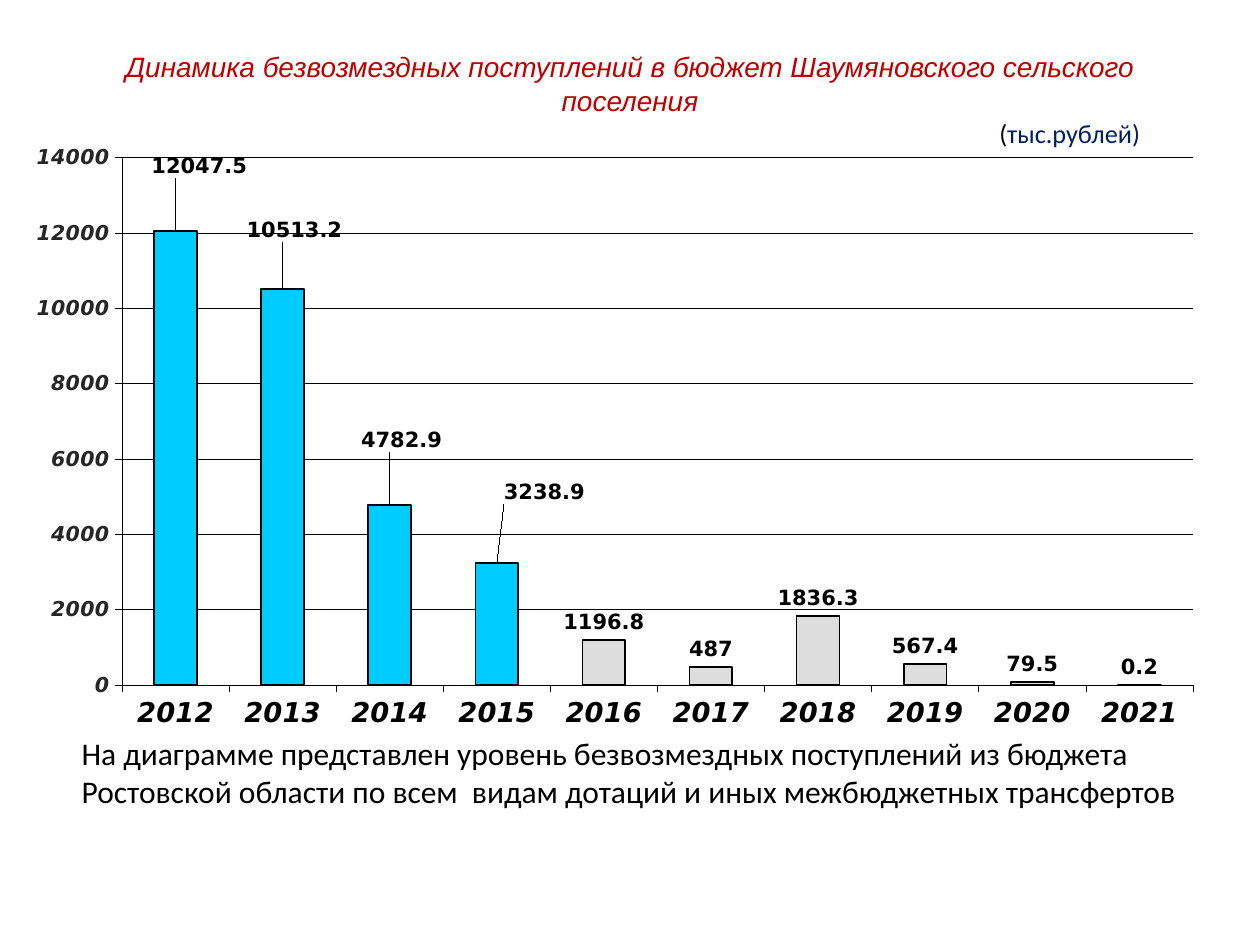
from lxml.etree import SubElement
from pptx import Presentation
from pptx.chart.data import CategoryChartData
from pptx.dml.color import RGBColor
from pptx.enum.chart import XL_CHART_TYPE, XL_LABEL_POSITION, XL_TICK_LABEL_POSITION, XL_TICK_MARK
from pptx.enum.text import MSO_ANCHOR, MSO_AUTO_SIZE, PP_ALIGN
from pptx.oxml.ns import qn
from pptx.util import Pt

BLACK = RGBColor(0x00, 0x00, 0x00)
DARK_GREY = RGBColor(0x26, 0x26, 0x26)
LIGHT_GREY = RGBColor(0xDD, 0xDD, 0xDD)
CYAN = RGBColor(0x00, 0xCC, 0xFF)
RED = RGBColor(0xC0, 0x00, 0x00)
NAVY = RGBColor(0x00, 0x20, 0x60)

CHART_FONT = "DejaVu Sans"
YEARS = [str(year) for year in range(2012, 2022)]
RECEIPTS = [12047.5, 10513.2, 4782.9, 3238.9, 1196.8, 487, 1836.3, 567.4, 79.5, 0.2]
LABEL_SHIFTS = [(0.02, -0.08), (0.01, -0.07), (0.01, -0.08), (0.04, -0.09)]


def style_font(font, name, size, color, bold=False, italic=False):
    """Set the typeface, size, colour and style of a font."""
    font.name = name
    font.size = Pt(size)
    font.color.rgb = color
    font.bold = bold
    font.italic = italic


def style_line(line, width):
    """Give a line a black colour and a width."""
    line.color.rgb = BLACK
    line.width = Pt(width)


def add_layout(parent, position, settings):
    """Insert a manual layout into a chart element."""
    for layout in parent.findall(qn("c:layout")):
        parent.remove(layout)
    layout = parent.makeelement(qn("c:layout"), {})
    parent.insert(position, layout)
    manual = SubElement(layout, qn("c:manualLayout"))
    for tag, value in settings.items():
        SubElement(manual, qn(f"c:{tag}")).set("val", str(value))


def fill_title(slide):
    """Write the heading and the unit of measure in the title placeholder."""
    title = slide.shapes.title
    title.left, title.top, title.width, title.height = Pt(45.5), Pt(22.5), Pt(629), Pt(85)
    frame = title.text_frame
    frame.auto_size = MSO_AUTO_SIZE.NONE
    frame.vertical_anchor = MSO_ANCHOR.TOP
    frame.margin_left = frame.margin_right = Pt(23)
    frame.margin_top = Pt(6)
    heading = frame.paragraphs[0]
    heading.text = "Динамика безвозмездных поступлений в бюджет Шаумяновского сельского поселения"
    heading.alignment = PP_ALIGN.CENTER
    style_font(heading.font, "Arial", 16, RED, italic=True)
    unit = frame.add_paragraph()
    unit.alignment = PP_ALIGN.RIGHT
    style_font(unit.font, "Calibri", 15, BLACK)
    unit.add_run().text = "("
    name = unit.add_run()
    name.text = "тыс.рублей)"
    name.font.color.rgb = NAVY


def style_axes(chart):
    """Format both axes and the gridlines."""
    for axis, size, color in ((chart.category_axis, 15.6, BLACK), (chart.value_axis, 11.7, DARK_GREY)):
        style_font(axis.tick_labels.font, CHART_FONT, size, color, bold=True, italic=True)
        style_line(axis.format.line, 0.25)
        axis.major_tick_mark = XL_TICK_MARK.OUTSIDE
        axis.minor_tick_mark = XL_TICK_MARK.NONE
    chart.category_axis.tick_label_position = XL_TICK_LABEL_POSITION.LOW
    value_axis = chart.value_axis
    value_axis.minimum_scale, value_axis.maximum_scale, value_axis.major_unit = 0, 14000, 2000
    style_line(value_axis.major_gridlines.format.line, 0.25)


def style_series(series):
    """Colour the columns and place their value labels."""
    series.format.fill.solid()
    series.format.fill.fore_color.rgb = LIGHT_GREY
    style_line(series.format.line, 0.98)
    labels = series.data_labels
    labels.show_value = True
    labels.position = XL_LABEL_POSITION.OUTSIDE_END
    style_font(labels.font, CHART_FONT, 12, BLACK, bold=True)
    for index in range(len(LABEL_SHIFTS)):
        point = series.points[index]
        point.format.fill.solid()
        point.format.fill.fore_color.rgb = CYAN
        style_line(point.format.line, 0.98)
        style_font(point.data_label.font, CHART_FONT, 12, BLACK, bold=True)
        point.data_label.position = XL_LABEL_POSITION.OUTSIDE_END
    shifted = series.format.element if hasattr(series.format, "element") else None
    label_elements = series.points[0].data_label if shifted is not None else None


def shift_labels(chart):
    """Move the labels of the tallest columns away from their bars."""
    label_elements = chart.element.iter(qn("c:dLbl")) if hasattr(chart, "element") else []
    for label, (x, y) in zip(label_elements, LABEL_SHIFTS):
        add_layout(label, 1, {"x": x, "y": y})


def add_receipts_chart(slide):
    """Add the column chart of receipts by year."""
    data = CategoryChartData()
    data.categories = YEARS
    data.add_series("Series 1", RECEIPTS)
    chart = slide.shapes.add_chart(
        XL_CHART_TYPE.COLUMN_CLUSTERED, Pt(8.5), Pt(83), Pt(680), Pt(339), data).chart
    style_font(chart.font, CHART_FONT, 22.4, BLACK, bold=True)
    chart.has_title = False
    chart.has_legend = False
    plot = chart.plots[0]
    plot.vary_by_categories = False
    plot.gap_width = 150
    style_axes(chart)
    style_series(plot.series[0])
    shift_labels(chart)
    plot_area = chart.element.find(f".//{qn('c:plotArea')}") if hasattr(chart, "element") else None
    if plot_area is not None:
        add_layout(plot_area, 0, {"layoutTarget": "inner", "xMode": "edge", "yMode": "edge",
                                  "x": 0.09, "y": 0.02, "w": 0.9, "h": 0.89})


def add_note(slide):
    """Add the explanation below the chart."""
    box = slide.shapes.add_textbox(Pt(39.5), Pt(416), Pt(658), Pt(51))
    box.text_frame.word_wrap = True
    paragraph = box.text_frame.paragraphs[0]
    paragraph.text = ("На диаграмме представлен уровень безвозмездных поступлений из бюджета "
                      "Ростовской области по всем  видам дотаций и иных межбюджетных трансфертов")
    style_font(paragraph.font, "Calibri", 18, BLACK)


def main():
    """Build and save the slide."""
    presentation = Presentation()
    presentation.slide_width, presentation.slide_height = Pt(720), Pt(540)
    slide = presentation.slides.add_slide(presentation.slide_layouts[5])
    fill_title(slide)
    add_receipts_chart(slide)
    add_note(slide)
    presentation.save("out.pptx")


if __name__ == "__main__":
    main()
